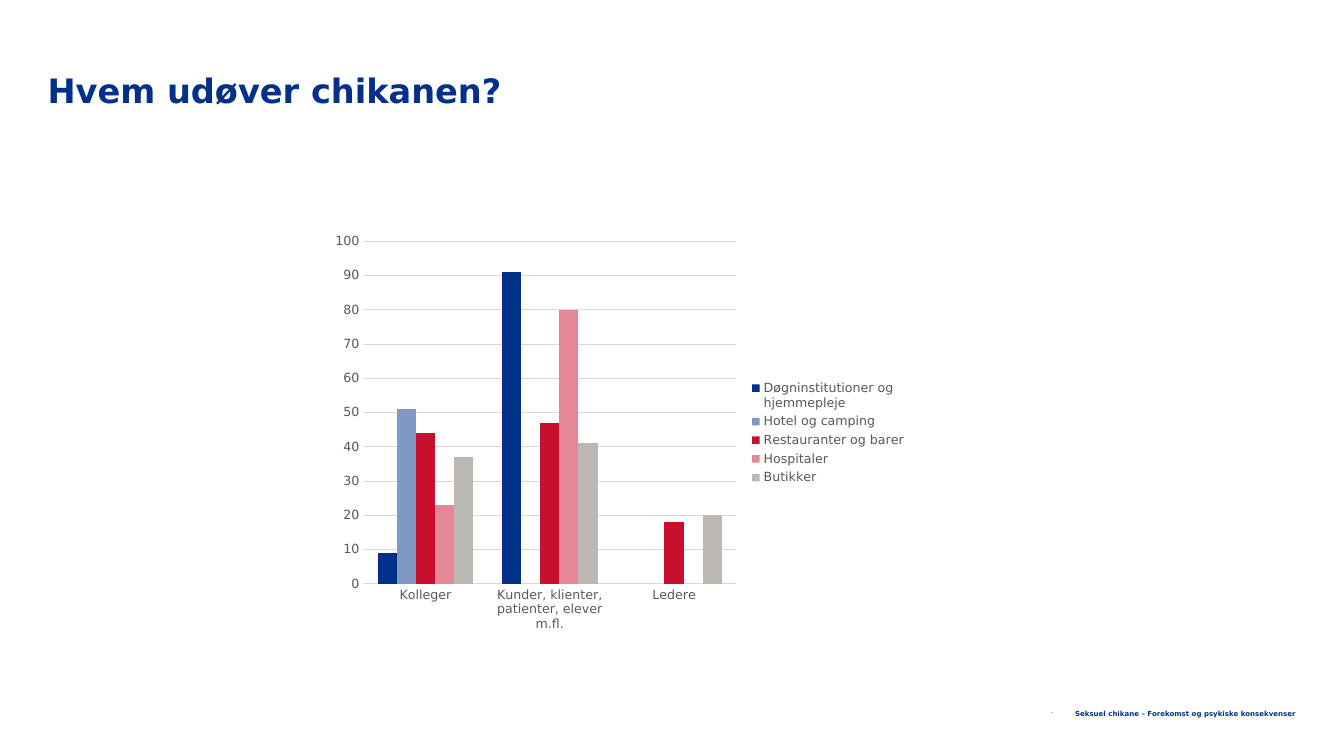
from lxml.etree import SubElement
from pptx import Presentation
from pptx.chart.data import CategoryChartData
from pptx.dml.color import RGBColor
from pptx.enum.chart import XL_CHART_TYPE, XL_LEGEND_POSITION, XL_TICK_MARK
from pptx.enum.text import MSO_ANCHOR, MSO_AUTO_SIZE, PP_ALIGN
from pptx.oxml.ns import qn
from pptx.util import Cm, Pt

NAVY = RGBColor(0x00, 0x30, 0x87)
LIGHT_BLUE = RGBColor(0x80, 0x98, 0xC3)
RED = RGBColor(0xC8, 0x10, 0x2E)
PINK = RGBColor(0xE4, 0x88, 0x97)
WARM_GREY = RGBColor(0xBB, 0xB7, 0xB2)
TEXT_GREY = RGBColor(0x59, 0x59, 0x59)
GRID_GREY = RGBColor(0xD9, 0xD9, 0xD9)

CATEGORIES = ["Kolleger", "Kunder, klienter, patienter, elever m.fl.", "Ledere"]
SECTORS = [
    ("Døgninstitutioner og hjemmepleje", (9, 91, None), NAVY),
    ("Hotel og camping", (51, None, None), LIGHT_BLUE),
    ("Restauranter og barer", (44, 47, 18), RED),
    ("Hospitaler", (23, 80, None), PINK),
    ("Butikker", (37, 41, 20), WARM_GREY),
]


class SlideBuilder:
    """Holds the style and the current slide."""

    font_name = "DejaVu Sans"

    def __init__(self, prs):
        self.s = prs.slides.add_slide(prs.slide_layouts[5])

    def style_font(self, font, size, color, bold=False):
        font.name = self.font_name
        font.size = Pt(size)
        font.bold = bold
        font.color.rgb = color

    def fill_text(self, sp, text, size, anchor, align):
        tf = sp.text_frame
        tf.word_wrap = True
        tf.auto_size = MSO_AUTO_SIZE.NONE
        tf.vertical_anchor = anchor
        tf.margin_left = tf.margin_right = tf.margin_top = tf.margin_bottom = 0
        tf.text = text
        p = tf.paragraphs[0]
        p.alignment = align
        self.style_font(p.runs[0].font, size, NAVY, bold=True)
        return p

    def title(self, text, left, top, width, height):
        sp = self.s.shapes.title
        sp.left, sp.top, sp.width, sp.height = left, top, width, height
        p = self.fill_text(sp, text, 24, MSO_ANCHOR.TOP, PP_ALIGN.LEFT)
        p.line_spacing = 1.04

    def footer(self, text, left, top, width, height):
        sp = self.s.shapes.add_textbox(left, top, width, height)
        p = self.fill_text(sp, text, 5, MSO_ANCHOR.BOTTOM, PP_ALIGN.RIGHT)
        SubElement(p._p.get_or_add_pPr(), qn("a:buChar"), char="·")

    def column_chart(self, categories, series, left, top, width, height):
        data = CategoryChartData(number_format="#,##0")
        data.categories = categories
        for name, values, _ in series:
            data.add_series(name, values)
        chart = self.s.shapes.add_chart(
            XL_CHART_TYPE.COLUMN_CLUSTERED, left, top, width, height, data
        ).chart
        chart.has_title = False
        self.style_font(chart.font, 10, TEXT_GREY)

        # Columns
        plot = chart.plots[0]
        plot.gap_width = 150
        plot.overlap = 0
        plot.vary_by_categories = False
        for column, (_, _, color) in zip(plot.series, series):
            column.format.fill.solid()
            column.format.fill.fore_color.rgb = color

        # Axes and gridlines
        for axis in (chart.category_axis, chart.value_axis):
            axis.major_tick_mark = axis.minor_tick_mark = XL_TICK_MARK.NONE
            self.style_font(axis.tick_labels.font, 9, TEXT_GREY)
        value_axis = chart.value_axis
        value_axis.minimum_scale, value_axis.maximum_scale = 0, 100
        value_axis.major_unit = 10
        value_axis.format.line.fill.background()
        value_axis.has_major_gridlines = True
        for line in (chart.category_axis.format.line,
                     value_axis.major_gridlines.format.line):
            line.color.rgb = GRID_GREY
            line.width = Pt(0.75)

        # Legend
        chart.has_legend = True
        chart.legend.position = XL_LEGEND_POSITION.RIGHT
        chart.legend.include_in_layout = False
        self.style_font(chart.legend.font, 9, TEXT_GREY)


def main():
    prs = Presentation()
    prs.slide_width, prs.slide_height = Cm(33.87), Cm(19.05)
    slide = SlideBuilder(prs)
    slide.title("Hvem udøver chikanen?", Cm(1.2), Cm(1.73), Cm(31.47), Cm(1))
    slide.column_chart(CATEGORIES, SECTORS, Cm(8.15), Cm(5.69), Cm(14.94), Cm(10.44))
    slide.footer("Seksuel chikane – Forekomst og psykiske konsekvenser",
                 Cm(25.48), Cm(17.63), Cm(7.19), Cm(0.46))
    prs.save("out.pptx")


if __name__ == "__main__":
    main()
